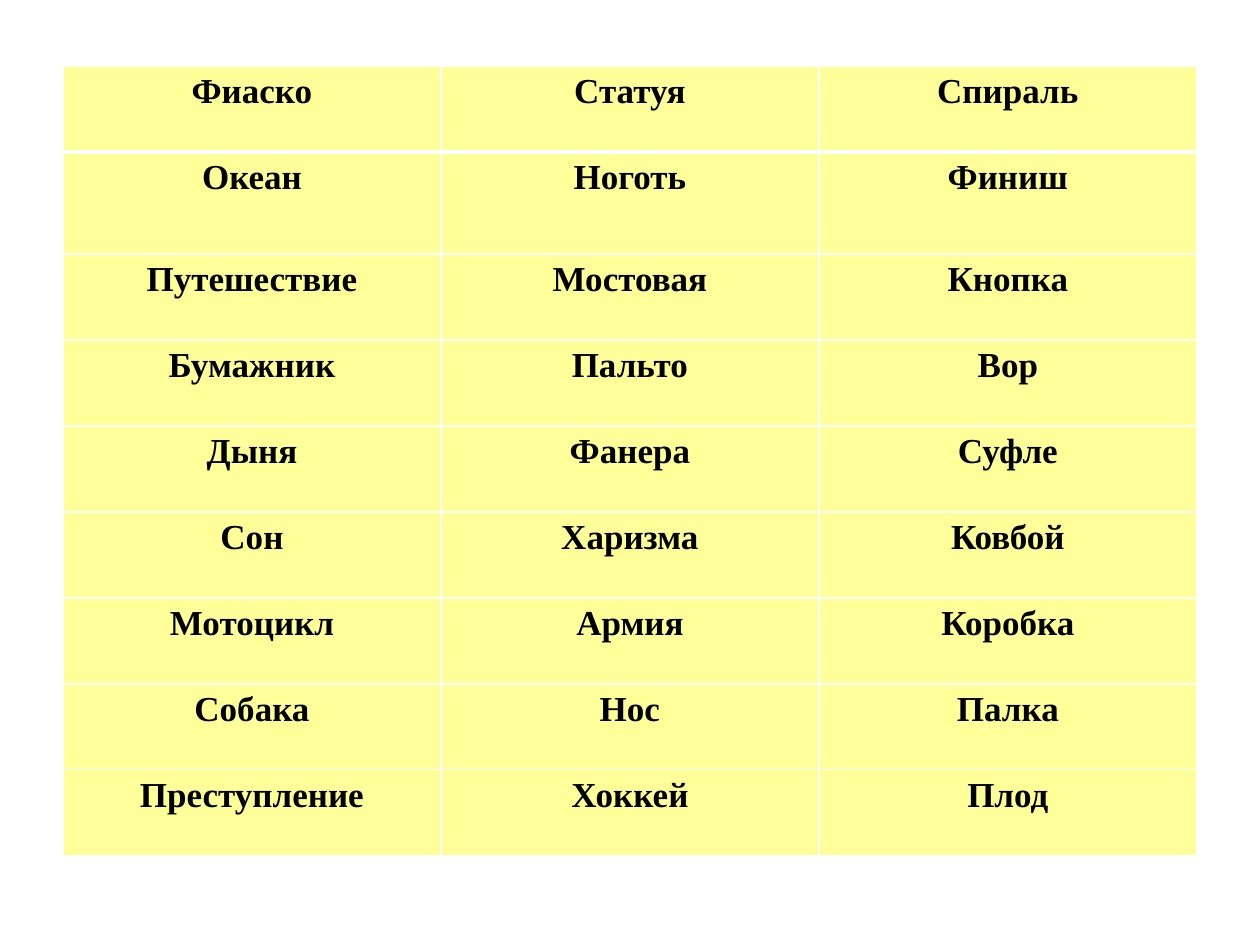
from lxml.etree import SubElement
from pptx import Presentation
from pptx.dml.color import RGBColor
from pptx.enum.text import PP_ALIGN
from pptx.oxml.ns import qn
from pptx.util import Pt

PX = 914400 // 126
YELLOW = RGBColor(0xFF, 0xFF, 0x99)
WHITE = RGBColor(0xFF, 0xFF, 0xFF)
BLACK = RGBColor(0, 0, 0)
FONT = "Times New Roman"
ROW_HEIGHTS = [86, 102] + [86] * 7
WORDS = [
    ("Фиаско", "Статуя", "Спираль"),
    ("Океан", "Ноготь", "Финиш"),
    ("Путешествие", "Мостовая", "Кнопка"),
    ("Бумажник", "Пальто", "Вор"),
    ("Дыня", "Фанера", "Суфле"),
    ("Сон", "Харизма", "Ковбой"),
    ("Мотоцикл", "Армия", "Коробка"),
    ("Собака", "Нос", "Палка"),
    ("Преступление", "Хоккей", "Плод"),
]


def set_borders(cell, top, bottom):
    """Draw white cell borders, with top and bottom widths in points."""
    properties = cell._tc.get_or_add_tcPr()
    for side, width in (("L", 1), ("R", 1), ("T", top), ("B", bottom)):
        line = SubElement(properties, qn(f"a:ln{side}"), w=str(Pt(width)))
        fill = SubElement(line, qn("a:solidFill"))
        SubElement(fill, qn("a:srgbClr"), val=str(WHITE))


def write_word(cell, word):
    """Put one bold centred word on the yellow cell."""
    cell.fill.solid()
    cell.fill.fore_color.rgb = YELLOW
    para = cell.text_frame.paragraphs[0]
    para.text = word
    para.alignment = PP_ALIGN.CENTER
    font = para.runs[0].font
    font.name = FONT
    font.size = Pt(20)
    font.bold = True
    font.color.rgb = BLACK


def loosen(cell):
    """Replace the cell margins with wider line and paragraph spacing."""
    cell.margin_left = cell.margin_right = 0
    cell.margin_top = cell.margin_bottom = 0
    para = cell.text_frame.paragraphs[0]
    para.line_spacing = 1.15
    para.space_after = Pt(10)


def add_word_table(page, left, top, width):
    """Place the word table with equal columns across the given width."""
    box = page.shapes.add_table(
        len(WORDS), len(WORDS[0]),
        left * PX, top * PX, width * PX, sum(ROW_HEIGHTS) * PX,
    )
    table = box.table
    for column in table.columns:
        column.width = width * PX // len(WORDS[0])
    for index, words in enumerate(WORDS):
        table.rows[index].height = ROW_HEIGHTS[index] * PX
        for position, word in enumerate(words):
            cell = table.cell(index, position)
            set_borders(cell, 3 if index == 1 else 1, 3 if index == 0 else 1)
            write_word(cell, word)
    loosen(table.cell(0, 1))


def main():
    """Build the deck and save it."""
    deck = Presentation()
    deck.slide_width = 1260 * PX
    deck.slide_height = 945 * PX
    page = deck.slides.add_slide(deck.slide_layouts[6])
    page.background.fill.solid()
    page.background.fill.fore_color.rgb = WHITE
    add_word_table(page, 63, 66, 1134)
    deck.save("out.pptx")


if __name__ == "__main__":
    main()
